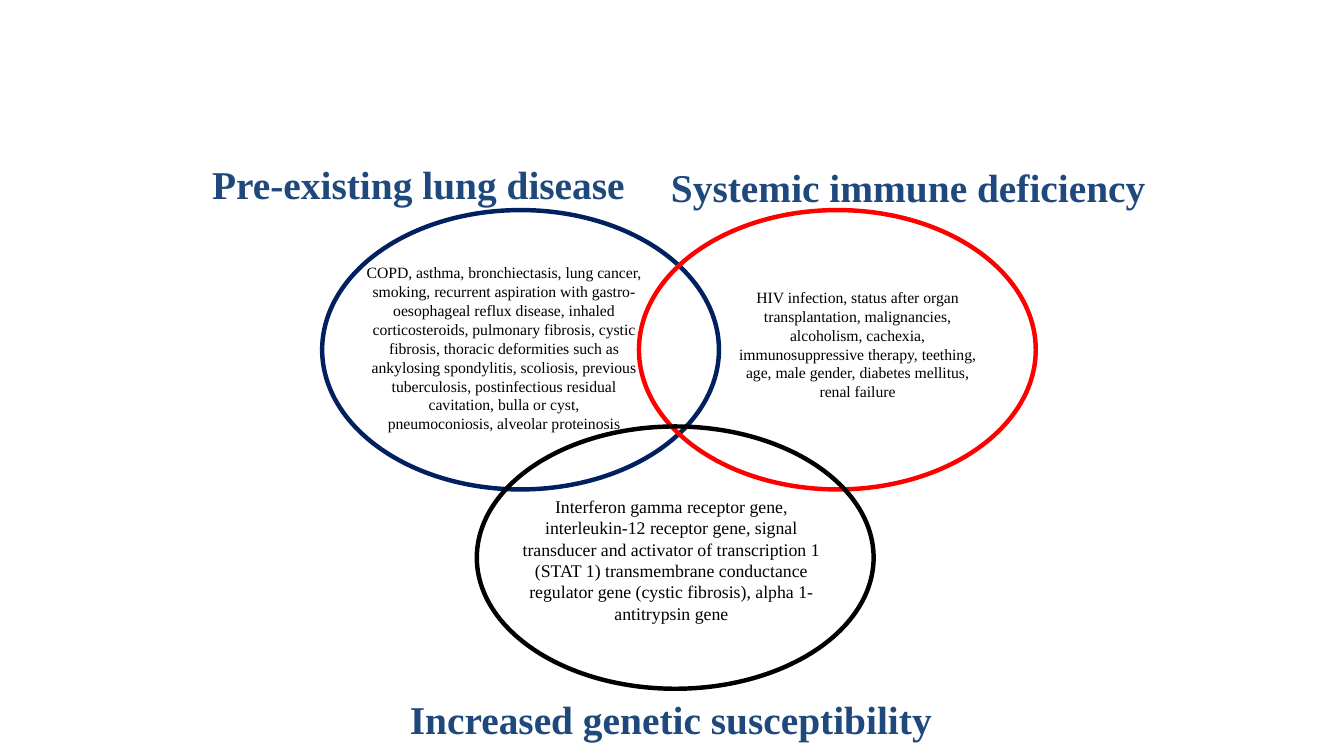
from pptx import Presentation
from pptx.dml.color import RGBColor
from pptx.enum.shapes import MSO_SHAPE
from pptx.enum.text import PP_ALIGN
from pptx.util import Emu, Pt

PX = 9144  # EMU per px, 100 px to the inch
FONT = "Times New Roman"
HEADING_COLOR = "1F497D"
BLACK = "000000"
BLANK_LAYOUT = 6
OVAL = MSO_SHAPE.OVAL
LEFT, CENTER = PP_ALIGN.LEFT, PP_ALIGN.CENTER

# Outline colour and box of each risk group
GROUPS = [
    ("002060", (302, 197, 372, 262)),
    ("FF0000", (599, 197, 372, 262)),
    (BLACK, (447, 400, 372, 246)),
]

# Heading, box and alignment
HEADINGS = [
    ("Pre-existing lung disease", (189, 145, 424, 55), LEFT),
    ("Systemic immune deficiency", (608, 148, 488, 55), CENTER),
    ("Increased genetic susceptibility", (355, 647, 549, 55), CENTER),
]

# Risk factors, box and text size
FACTORS = [
    ("COPD, asthma, bronchiectasis, lung cancer, smoking, recurrent "
     "aspiration with gastro-oesophageal reflux disease, inhaled "
     "corticosteroids, pulmonary fibrosis, cystic fibrosis, thoracic "
     "deformities such as ankylosing spondylitis, scoliosis, previous "
     "tuberculosis, postinfectious residual cavitation, bulla or cyst,\n"
     "pneumoconiosis, alveolar proteinosis",
     (332, 242, 281, 171), 10.6),
    ("HIV infection, status after organ transplantation, malignancies, "
     "alcoholism, cachexia, immunosuppressive therapy, teething, age, "
     "male gender, diabetes mellitus, renal failure",
     (679, 265, 250, 118), 10.6),
    ("Interferon gamma receptor gene, interleukin-12 receptor gene, signal "
     "transducer and activator of transcription 1 (STAT 1) transmembrane "
     "conductance regulator gene (cystic fibrosis), alpha 1-antitrypsin gene",
     (477, 460, 305, 131), 12),
]


def rgb(color):
    return RGBColor.from_string(color)


def emu(box):
    return [Emu(length * PX) for length in box]


def add_group_oval(slide, box, color):
    oval = slide.shapes.add_shape(OVAL, *emu(box))
    oval.shadow.inherit = False
    oval.fill.background()
    oval.line.color.rgb = rgb(color)
    oval.line.width = Pt(3)


def add_label(slide, text, box, size, color, align=CENTER, bold=False):
    frame = slide.shapes.add_textbox(*emu(box)).text_frame
    frame.word_wrap = True
    frame.text = text
    for paragraph in frame.paragraphs:
        paragraph.alignment = align
        for run in paragraph.runs:
            run.font.name = FONT
            run.font.size = Pt(size)
            run.font.bold = bold
            run.font.color.rgb = rgb(color)


def main():
    prs = Presentation()
    prs.slide_width, prs.slide_height = emu((1260, 709))
    slide = prs.slides.add_slide(prs.slide_layouts[BLANK_LAYOUT])

    # Overlapping risk groups
    for color, box in GROUPS:
        add_group_oval(slide, box, color)

    # Group headings
    for heading, box, align in HEADINGS:
        add_label(slide, heading, box, 26.6, HEADING_COLOR, align, bold=True)

    # Risk factors inside the groups
    for factors, box, size in FACTORS:
        add_label(slide, factors, box, size, BLACK)

    prs.save("out.pptx")


if __name__ == "__main__":
    main()
